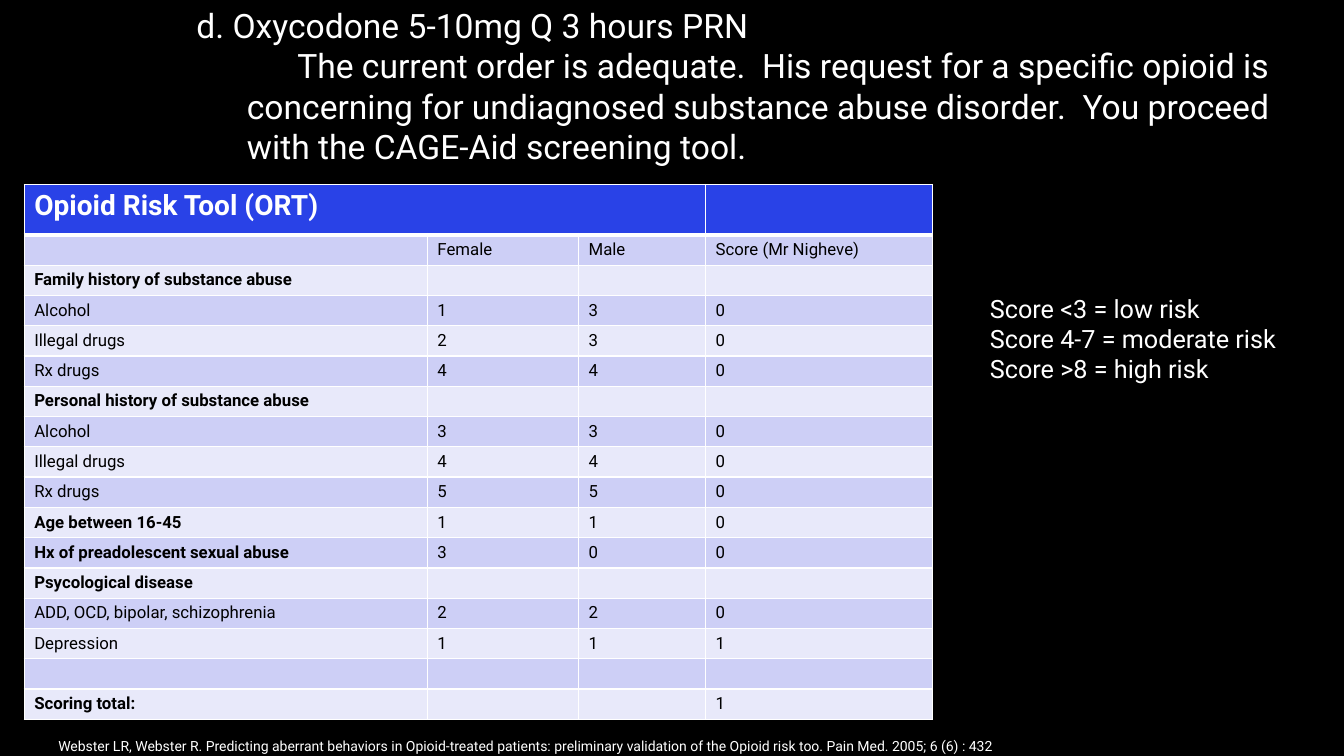
from dataclasses import dataclass

from lxml.etree import SubElement
from pptx import Presentation
from pptx.dml.color import RGBColor
from pptx.oxml.ns import qn
from pptx.slide import Slide
from pptx.table import _Cell as Cell
from pptx.util import Inches, Pt

SLIDE_WIDTH, SLIDE_HEIGHT = Inches(13.33), Inches(7.5)
FONT = "Roboto"
BLACK, WHITE, HEADER_BLUE = "000000", "FFFFFF", "2942E7"
BANDS = ("CDCFF6", "E8E9FA")
COLUMN_SHARES = (30, 11.25, 9.45, 16.88)
HEADER_SHARE, ROW_SHARE = 6.67, 4
THIN, THICK = 1, 3


@dataclass(frozen=True)
class Box:
    """Position and size as percentages of the slide."""
    left: float
    top: float
    width: float
    height: float


@dataclass(frozen=True)
class TextBlock:
    """A text box with one size for all its paragraphs."""
    box: Box
    size: float
    lines: tuple[str, ...]


@dataclass(frozen=True)
class RiskRow:
    """One line of the risk tool."""
    label: str = ""
    female: str = ""
    male: str = ""
    score: str = ""
    bold: bool = False


ORDER = TextBlock(Box(13.88, 0, 84.77, 26.93), 24, (
    "d. Oxycodone 5-10mg Q 3 hours PRN",
    "\tThe current order is adequate.  His request for a specific opioid is concerning for "
    "undiagnosed substance abuse disorder.  You proceed with the CAGE-Aid screening tool.",
))
CITATION = TextBlock(Box(3.6, 96.93, 75.02, 3.6), 10, (
    "Webster LR, Webster R. Predicting aberrant behaviors in Opioid‐treated patients: "
    "preliminary validation of the Opioid risk too. Pain Med. 2005; 6 (6) : 432",
))
LEGEND = TextBlock(Box(72.92, 38.13, 23.03, 13.47), 18, (
    "Score <3 = low risk", "Score 4-7 = moderate risk", "Score >8 = high risk",
))
TABLE_BOX = Box(1.8, 24.4, sum(COLUMN_SHARES), 70.67)
RISK_ROWS = (
    RiskRow("", "Female", "Male", "Score (Mr Nigheve)"),
    RiskRow("Family history of substance abuse", bold=True),
    RiskRow("Alcohol", "1", "3", "0"),
    RiskRow("Illegal drugs", "2", "3", "0"),
    RiskRow("Rx drugs", "4", "4", "0"),
    RiskRow("Personal history of substance abuse", bold=True),
    RiskRow("Alcohol", "3", "3", "0"),
    RiskRow("Illegal drugs", "4", "4", "0"),
    RiskRow("Rx drugs", "5", "5", "0"),
    RiskRow("Age between 16-45", "1", "1", "0", bold=True),
    RiskRow("Hx of preadolescent sexual abuse", "3", "0", "0", bold=True),
    RiskRow("Psycological disease", bold=True),
    RiskRow("ADD, OCD, bipolar, schizophrenia", "2", "2", "0"),
    RiskRow("Depression", "1", "1", "1"),
    RiskRow(),
    RiskRow("Scoring total:", score="1", bold=True),
)


def color(value: str) -> RGBColor:
    """Turn a hex string into a colour."""
    return RGBColor.from_string(value)


def across(share: float) -> int:
    """Convert a percentage of the slide's width to a length."""
    return round(SLIDE_WIDTH * share / 100)


def down(share: float) -> int:
    """Convert a percentage of the slide's height to a length."""
    return round(SLIDE_HEIGHT * share / 100)


def place(box: Box) -> tuple[int, int, int, int]:
    """Return left, top, width and height as lengths."""
    return across(box.left), down(box.top), across(box.width), down(box.height)


def format_runs(paragraph, size: float, ink: str, bold: bool = False) -> None:
    """Apply the font to every run of a paragraph."""
    for run in paragraph.runs:
        run.font.name = FONT
        run.font.size = Pt(size)
        run.font.bold = bold
        run.font.color.rgb = color(ink)


def add_text(slide: Slide, block: TextBlock):
    """Add a wrapped white text box and return its frame."""
    text_frame = slide.shapes.add_textbox(*place(block.box)).text_frame
    text_frame.word_wrap = True
    text_frame.text = "\n".join(block.lines)
    for paragraph in text_frame.paragraphs:
        format_runs(paragraph, block.size, WHITE)
    return text_frame


def add_border(cell: Cell, side: str, width: float) -> None:
    """Draw a white line on one side of a cell."""
    properties = cell._tc.get_or_add_tcPr()
    line = SubElement(properties, qn(f"a:ln{side}"), w=str(Pt(width)))
    SubElement(SubElement(line, qn("a:solidFill")), qn("a:srgbClr"), val=WHITE)


def fill_cell(cell: Cell, text: str, size: float, ink: str, fill: str, bold: bool,
              top: float, bottom: float) -> None:
    """Write a cell, its borders and its fill."""
    cell.text_frame.text = text
    paragraph = cell.text_frame.paragraphs[0]
    format_runs(paragraph, size, ink, bold)
    if not text:
        SubElement(paragraph._p, qn("a:endParaRPr"), sz=str(size * 100))
    for side, width in (("L", THIN), ("R", THIN), ("T", top), ("B", bottom)):
        add_border(cell, side, width)
    cell.fill.solid()
    cell.fill.fore_color.rgb = color(fill)


def add_risk_table(slide: Slide) -> None:
    """Add the Opioid Risk Tool table."""
    frame = slide.shapes.add_table(len(RISK_ROWS) + 1, len(COLUMN_SHARES), *place(TABLE_BOX))
    table = frame.table
    table.first_row = table.horz_banding = False
    for column, share in zip(table.columns, COLUMN_SHARES):
        column.width = across(share)
    for index, row in enumerate(table.rows):
        row.height = down(ROW_SHARE if index else HEADER_SHARE)
    for index in range(len(COLUMN_SHARES)):
        title = "" if index else "Opioid Risk Tool (ORT)"
        fill_cell(table.cell(0, index), title, 20, WHITE, HEADER_BLUE, True, THIN, THICK)
    table.cell(0, 0).merge(table.cell(0, 2))
    for index, row in enumerate(RISK_ROWS):
        top = THIN if index else THICK
        for column, text in enumerate((row.label, row.female, row.male, row.score)):
            fill_cell(table.cell(index + 1, column), text, 12, BLACK, BANDS[index % 2],
                      row.bold and column == 0, top, THIN)


def main() -> None:
    """Build and save the slide."""
    presentation = Presentation()
    presentation.slide_width, presentation.slide_height = SLIDE_WIDTH, SLIDE_HEIGHT
    slide = presentation.slides.add_slide(presentation.slide_layouts[6])
    slide.background.fill.solid()
    slide.background.fill.fore_color.rgb = color(BLACK)
    answer = add_text(slide, ORDER).paragraphs[1]
    answer.level = 1
    indent = answer._p.get_or_add_pPr()
    indent.set("marL", str(Inches(0.5)))
    indent.set("indent", "0")
    add_risk_table(slide)
    add_text(slide, CITATION)
    add_text(slide, LEGEND)
    presentation.save("out.pptx")


if __name__ == "__main__":
    main()
